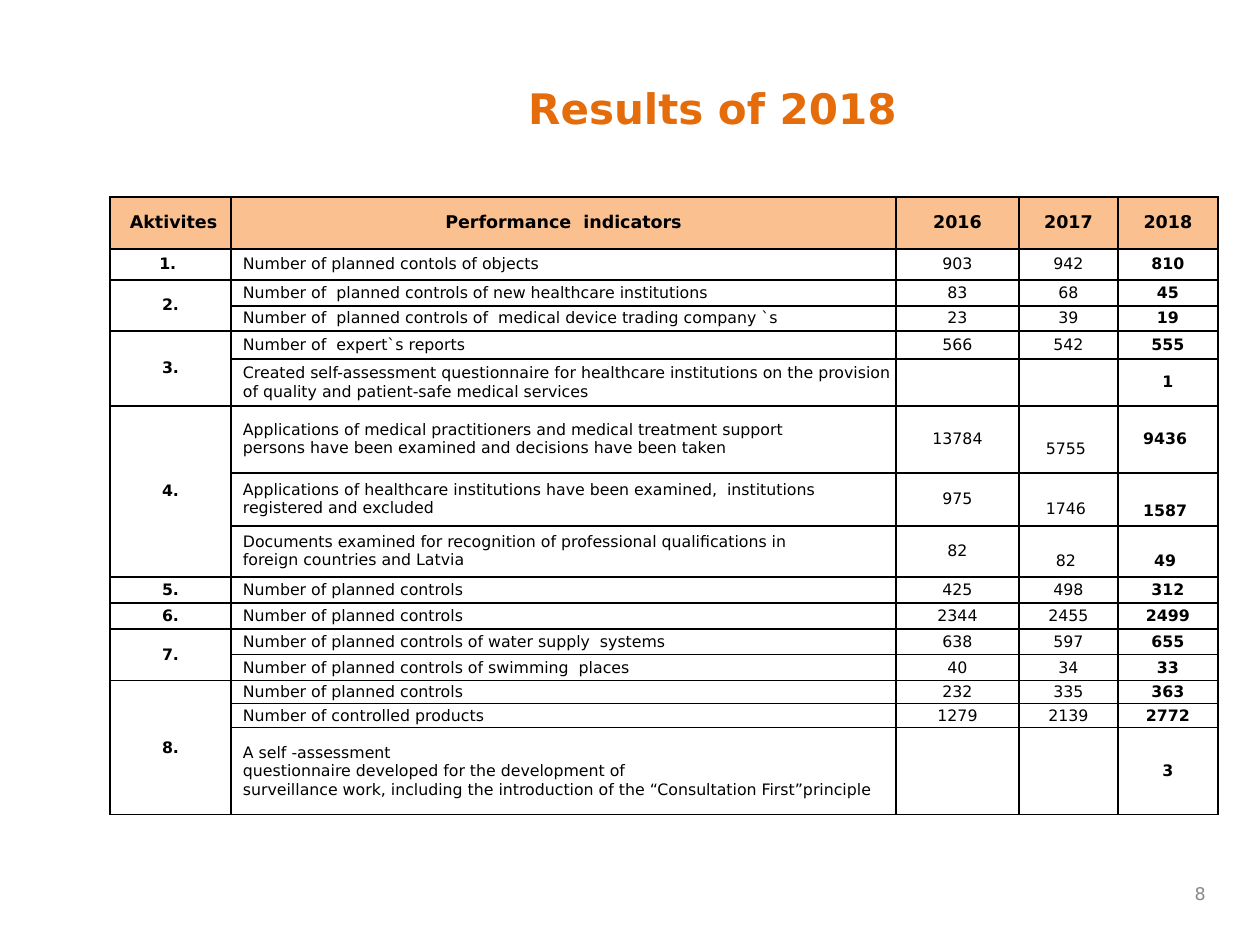
from lxml import etree
from pptx import Presentation
from pptx import util as u
from pptx.dml.color import RGBColor
from pptx.enum import text
from pptx.oxml import ns

ORANGE = RGBColor(0xE4, 0x6C, 0x0A)
PEACH = RGBColor(0xFA, 0xC0, 0x90)
GRAY = RGBColor(0x89, 0x89, 0x89)
BLACK = RGBColor(0, 0, 0)
PX = 914400 / 126
FONT = "DejaVu Sans"
NBSP = chr(160)
CENTER, LEFT, RIGHT = text.PP_ALIGN.CENTER, text.PP_ALIGN.LEFT, text.PP_ALIGN.RIGHT


def px(value):
    return u.Emu(round(value * PX))


def write(frame, content, size, color, bold, align):
    frame.word_wrap = True
    for index, line in enumerate(content.split("\n")):
        paragraph = frame.add_paragraph() if index else frame.paragraphs[0]
        paragraph.alignment = align
        run = paragraph.add_run()
        run.text = line
        run.font.name = FONT
        run.font.size = u.Pt(size)
        run.font.bold = bold
        run.font.color.rgb = color


presentation = Presentation()
presentation.slide_width, presentation.slide_height = px(1260), px(945)
slide = presentation.slides.add_slide(presentation.slide_layouts[6])

title = slide.shapes.add_textbox(px(228), px(76), px(969), px(72))
write(title.text_frame, "Results of 2018", 24, ORANGE, True, CENTER)

page_number = slide.shapes.add_textbox(px(1176), px(872), px(42), px(42))
page_number.text_frame.vertical_anchor = text.MSO_ANCHOR.MIDDLE
write(page_number.text_frame, "8", 10, GRAY, False, RIGHT)

# "|" marks the only place where a line may wrap
ROWS = [
    (52, " Aktivites", "Performance  indicators", "2016", "2017", "2018"),
    (31, "1. ", "Number of planned contols of objects", "903", "942", "810"),
    (26, "2.", "Number of  planned controls of new healthcare institutions", "83", "68", "45"),
    (25, "", "Number of  planned controls of  medical device trading company `s", "23", "39", "19"),
    (28, "3.", "Number of  expert`s reports", "566", "542", "555"),
    (47, "", "Created self-assessment questionnaire for healthcare institutions on the provision "
     "of quality and patient-safe medical services", "", "", "1"),
    (67, "4.", "Applications of medical practitioners and medical treatment support|"
     "persons have been examined and decisions have been taken", "13784", "5755 ", "9436 "),
    (53, "", "Applications of healthcare institutions have been examined,  institutions|"
     "registered and excluded", "975", "1746 ", "1587 "),
    (51, "", "Documents examined for recognition of professional qualifications in|"
     "foreign countries and Latvia", "82", "82 ", "49 "),
    (26, "5.", "Number of planned controls", "425", "498", "312"),
    (26, "6.", "Number of planned controls", "2344", "2455", "2499"),
    (26, "7.", "Number of planned controls of water supply  systems", "638", "597", "655"),
    (26, "", "Number of planned controls of swimming  places", "40", "34", "33"),
    (23, "8.", "Number of planned controls", "232", "335", "363"),
    (24, "", "Number of controlled products", "1279", "2139", "2772"),
    (87, "", "A self -assessment\nquestionnaire developed for the development of|"
     "surveillance work, including the introduction of the “Consultation First”principle",
     "", "", "3"),
]
COLUMN_WIDTHS = [121, 665, 123, 99, 100]
MERGES = [(2, 3), (4, 5), (6, 8), (11, 12), (13, 15)]
LOWERED = {(6, 3): 19, (7, 3): 19, (7, 4): 24, (8, 3): 19, (8, 4): 19}

table_frame = slide.shapes.add_table(
    len(ROWS), len(COLUMN_WIDTHS), px(110), px(197),
    px(sum(COLUMN_WIDTHS)), px(sum(row[0] for row in ROWS)))
table = table_frame.table
table.horz_banding = False
for column, width in zip(table.columns, COLUMN_WIDTHS):
    column.width = px(width)

for row_index, (height, *values) in enumerate(ROWS):
    table.rows[row_index].height = px(height)
    header = row_index == 0
    for column_index, value in enumerate(values):
        cell = table.cell(row_index, column_index)
        indicator = column_index == 1 and not header
        cell.vertical_anchor = text.MSO_ANCHOR.MIDDLE
        cell.margin_left = px(12 if indicator else 0)
        cell.margin_right = cell.margin_bottom = 0
        cell.margin_top = px(LOWERED.get((row_index, column_index), 0))
        if "|" in value:
            value = value.replace(" ", NBSP).replace("|", " ")
        write(cell.text_frame, value, 10 if header else 9, BLACK,
              header or column_index in (0, 4), LEFT if indicator else CENTER)
        properties = cell._tc.get_or_add_tcPr()
        for side in ("lnL", "lnR", "lnT", "lnB"):
            line = etree.SubElement(properties, ns.qn("a:" + side), w="12700")
            solid = etree.SubElement(line, ns.qn("a:solidFill"))
            etree.SubElement(solid, ns.qn("a:srgbClr"), val=str(BLACK))
        if header:
            cell.fill.solid()
            cell.fill.fore_color.rgb = PEACH
        else:
            cell.fill.background()

for first, last in MERGES:
    table.cell(first, 0).merge(table.cell(last, 0))

presentation.save("out.pptx")
